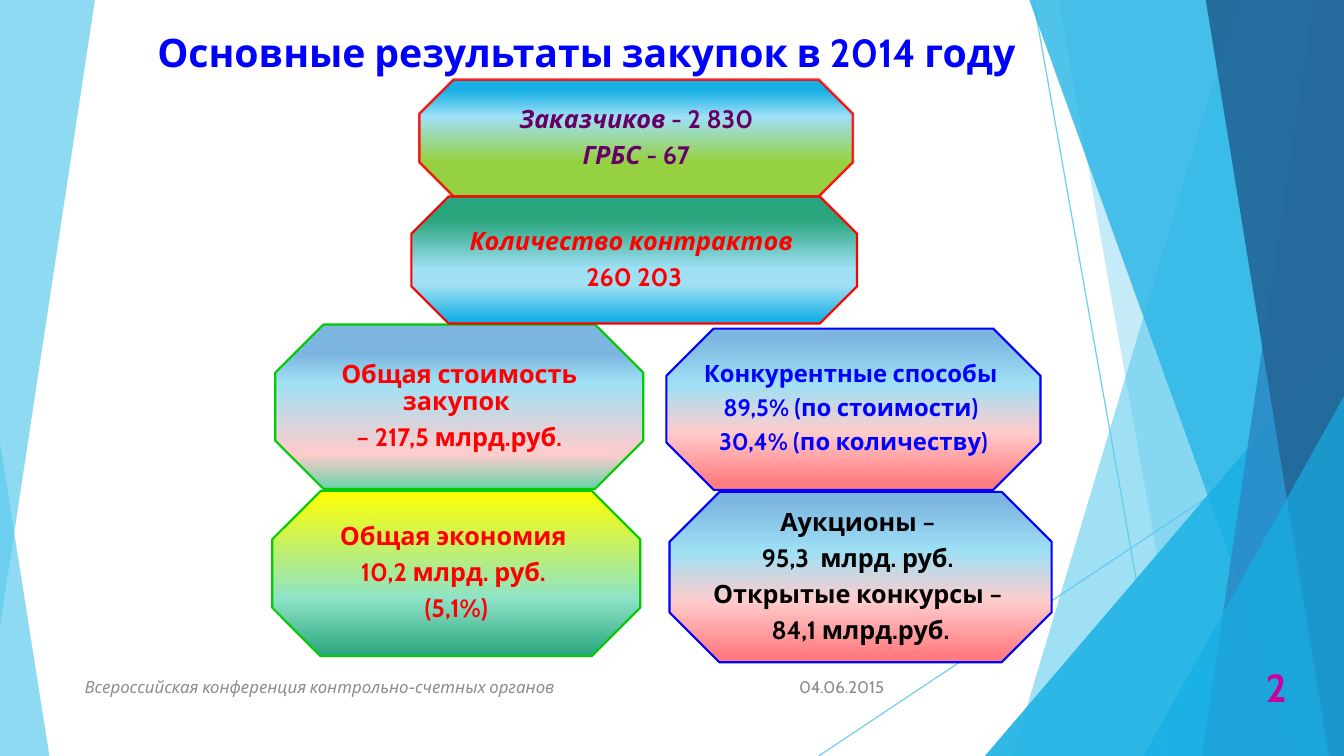
from lxml import etree
from pptx import Presentation
from pptx import util as u
from pptx.dml.color import RGBColor
from pptx.enum import shapes, text
from pptx.oxml.ns import qn

FONT = "Cabin"
SKY = RGBColor(0x5F, 0xCB, 0xEF)
AZURE = RGBColor(0x17, 0xB0, 0xE4)
STEEL = RGBColor(0x2E, 0x83, 0xC3)
NAVY = RGBColor(0x22, 0x62, 0x92)
ICE = RGBColor(0x9F, 0xE0, 0xF5)
LIME = RGBColor(0x96, 0xD1, 0x41)
DUSK = RGBColor(0x7C, 0xB5, 0xE0)
PINK = RGBColor(0xFF, 0xCC, 0xCC)
CORAL = RGBColor(0xFF, 0x7C, 0x80)
MINT = RGBColor(0x6E, 0xD2, 0xAA)
AQUA = RGBColor(0x8E, 0xE3, 0xC7)
JADE = RGBColor(0x29, 0xA5, 0x7D)
YELLOW = RGBColor(0xFF, 0xFF, 0x00)
RED = RGBColor(0xFF, 0x00, 0x00)
GREEN = RGBColor(0x00, 0xCC, 0x00)
BLUE = RGBColor(0x00, 0x00, 0xFF)
PURPLE = RGBColor(0x66, 0x00, 0x66)
MAGENTA = RGBColor(0xCC, 0x00, 0x99)
GRAY = RGBColor(0x8C, 0x8C, 0x8C)
BLACK = RGBColor(0x00, 0x00, 0x00)

LEFT, CENTER, RIGHT = text.PP_ALIGN.LEFT, text.PP_ALIGN.CENTER, text.PP_ALIGN.RIGHT
COOL_TO_RED = [(5, DUSK), (35, ICE), (64, PINK), (96, CORAL)]
OCTAGON_INSET = 0.1464  # text inset as a share of the octagon's height

# Right-hand decoration, back to front: kind, geometry, colour, opacity
RIBBONS = [
    ("free", [(12.28, 0), (13.33, 0), (13.33, 7.5), (10.04, 7.5)], SKY, 36),
    ("free", [(10.5, 0), (13.33, 0), (13.33, 7.5), (11.83, 7.5)], SKY, 20),
    ("triangle", (9.77, 3.33, 3.56, 4.17), AZURE, 66),
    ("free", [(10.21, 0), (13.33, 0), (13.33, 7.5), (12.91, 7.5)], AZURE, 50),
    ("free", [(13.03, 0), (13.33, 0), (13.33, 7.5), (11.92, 7.5)], STEEL, 70),
    ("free", [(11.96, 0), (13.33, 0), (13.33, 7.5), (13.18, 7.5)], NAVY, 80),
    ("triangle", (11.34, 3.93, 1.99, 3.57), AZURE, 66),
]
RAYS = [((10.25, 0), (11.58, 7.5)), ((13.33, 4.03), (8.12, 7.5))]

# Octagons: box, gradient stops, outline, font format, paragraphs of runs
BLOCKS = [
    dict(box=(4.16, 0.79, 4.3, 1.16), outline=(RED, 1.75, 85),
         stops=[(9, AZURE), (32, ICE), (70, LIME), (97, LIME)], color=PURPLE, size=18,
         lines=[[("Заказчиков", {"italic": True}), (" - 2 830", {})],
                [("ГРБС", {"italic": True}), (" - 67", {})]]),
    dict(box=(6.64, 4.88, 3.79, 1.69), outline=(BLUE, 1.5, 100),
         stops=COOL_TO_RED, color=BLACK, size=18,
         lines=[[("Аукционы – ", {})], [("95,3  млрд. руб. ", {})],
                [("Открытые конкурсы – ", {})], [("84,1 млрд.руб.", {})]]),
    dict(box=(2.73, 3.22, 3.65, 1.63), outline=(GREEN, 1.5, 100),
         stops=[(18, DUSK), (35, ICE), (79, PINK), (99, MINT)], color=RED, size=18,
         lines=[[("Общая стоимость закупок ", {})],
                [("– 217,5 млрд.руб", {}), (".", {"size": u.Pt(17)})]]),
    dict(box=(4.08, 1.95, 4.42, 1.26), outline=(RED, 1.5, 100),
         stops=[(18, JADE), (57, ICE), (70, ICE), (97, AZURE)], color=RED, size=18,
         lines=[[("Количество контрактов ", {"italic": True})], [("260 203", {})]]),
    dict(box=(6.61, 3.26, 3.71, 1.6), outline=(BLUE, 1.5, 100),
         stops=COOL_TO_RED, color=BLUE, size=17,
         lines=[[("Конкурентные способы ", {})], [("89,5% (по стоимости) ", {})],
                [("30,4% (по количеству)", {})]]),
    dict(box=(2.7, 4.87, 3.65, 1.64), outline=(GREEN, 1.5, 100),
         stops=[(0, YELLOW), (65, AQUA), (100, JADE)], color=RED, size=18,
         lines=[[("Общая экономия ", {})], [("10,2 млрд. руб. ", {})], [("(5,1%)", {})]]),
]


def inches(values):
    return [u.Inches(value) for value in values]


def set_opacity(properties, percent):
    for color in properties.iter(qn("a:srgbClr")):
        etree.SubElement(color, qn("a:alpha"), val=str(percent * 1000))


def add_run(paragraph, words, color, **formats):
    run = paragraph.add_run()
    run.text = words
    run.font.color.rgb = color
    for name, value in {"name": FONT, **formats}.items():
        setattr(run.font, name, value)


def prepare_frame(frame, anchor, margin=None):
    formats = {"word_wrap": True, "auto_size": text.MSO_AUTO_SIZE.NONE,
               "vertical_anchor": anchor}
    if margin is not None:
        formats.update({f"margin_{side}": u.Inches(margin)
                        for side in ("left", "top", "right", "bottom")})
    for name, value in formats.items():
        setattr(frame, name, value)


def add_ribbon(slide, kind, geometry, color, opacity, apex=1):
    if kind == "triangle":
        shape = slide.shapes.add_shape(shapes.MSO_SHAPE.ISOSCELES_TRIANGLE, *inches(geometry))
        shape.adjustments[0] = apex
    else:
        points = [inches(point) for point in geometry]
        builder = slide.shapes.build_freeform(*points[0])
        builder.add_line_segments(points[1:], close=True)
        shape = builder.convert_to_shape()
    shape.shadow.inherit = False
    shape.fill.solid()
    shape.fill.fore_color.rgb = color
    shape.line.fill.background()
    set_opacity(shape._element.spPr, opacity)


def add_ray(slide, start, end):
    ray = slide.shapes.add_connector(shapes.MSO_CONNECTOR.STRAIGHT, *inches(start + end))
    ray.line.color.rgb = SKY
    ray.line.width = u.Pt(0.75)
    properties = ray._element.spPr
    set_opacity(properties, 70)
    etree.SubElement(properties, qn("a:effectLst"))


def fill_gradient(shape, stops):
    shape.fill.gradient()
    shape.fill.gradient_angle = 270
    stop_list = shape._element.spPr.find(".//" + qn("a:gsLst"))
    for old_stop in list(stop_list):
        stop_list.remove(old_stop)
    for position, color in stops:
        stop = etree.SubElement(stop_list, qn("a:gs"), pos=str(position * 1000))
        etree.SubElement(stop, qn("a:srgbClr"), val=str(color))


def add_block(slide, box, stops, outline, color, size, lines):
    left, top, width, height = box
    octagon = slide.shapes.add_shape(shapes.MSO_SHAPE.OCTAGON, *inches(box))
    octagon.shadow.inherit = False
    fill_gradient(octagon, stops)
    line_color, line_width, opacity = outline
    octagon.line.color.rgb = line_color
    octagon.line.width = u.Pt(line_width)
    if opacity < 100:
        set_opacity(octagon._element.spPr.find(qn("a:ln")), opacity)

    inset = OCTAGON_INSET * height
    label = slide.shapes.add_textbox(*inches(
        (left + inset, top + inset, width - 2 * inset, height - 2 * inset)))
    frame = label.text_frame
    prepare_frame(frame, text.MSO_ANCHOR.MIDDLE, 0.07)
    for index, runs in enumerate(lines):
        paragraph = frame.add_paragraph() if index else frame.paragraphs[0]
        spacing = {"alignment": CENTER, "line_spacing": 0.9, "space_after": u.Pt(0.35 * size)}
        for name, value in spacing.items():
            setattr(paragraph, name, value)
        for words, formats in runs:
            add_run(paragraph, words, color, **{"size": u.Pt(size), "bold": True, **formats})


def add_footer(slide, left, width, words, alignment, color, size, **formats):
    box = slide.shapes.add_textbox(*inches((left, 6.61, width, 0.4)))
    prepare_frame(box.text_frame, text.MSO_ANCHOR.MIDDLE)
    paragraph = box.text_frame.paragraphs[0]
    paragraph.alignment = alignment
    add_run(paragraph, words, color, size=u.Pt(size), **formats)


def set_title(slide, words):
    title = slide.shapes.title
    title.left, title.top, title.width, title.height = inches((0.6, 0.23, 10.43, 0.57))
    prepare_frame(title.text_frame, text.MSO_ANCHOR.BOTTOM)
    paragraph = title.text_frame.paragraphs[0]
    paragraph.alignment = CENTER
    add_run(paragraph, words, BLUE, size=u.Pt(28), bold=True)


def main():
    presentation = Presentation()
    presentation.slide_width, presentation.slide_height = inches((13.33, 7.5))
    slide = presentation.slides.add_slide(presentation.slide_layouts[0])
    subtitle = slide.placeholders[1]._element
    subtitle.getparent().remove(subtitle)

    # Background: two layers of ribbons deepen the colours on the right
    for layer in range(2):
        for start, end in RAYS:
            add_ray(slide, start, end)
        for ribbon in RIBBONS:
            add_ribbon(slide, *ribbon)
    add_ribbon(slide, "triangle", (0, 4.39, 0.49, 3.11), SKY, 70, apex=0)
    add_ribbon(slide, "free", [(0, 0), (0.94, 0), (0.94, 0.01), (0, 6.22)], SKY, 70)

    # Title and footer
    set_title(slide, "Основные результаты закупок в 2014 году")
    add_footer(slide, 7.71, 1.16, "04.06.2015", RIGHT, GRAY, 12)
    add_footer(slide, 0.74, 6.89, "Всероссийская конференция контрольно-счетных органов",
               LEFT, GRAY, 12, italic=True)
    add_footer(slide, 12.11, 0.75, "2", RIGHT, MAGENTA, 28, bold=True)

    # Result blocks
    for block in BLOCKS:
        add_block(slide, **block)

    presentation.save("out.pptx")


if __name__ == "__main__":
    main()
